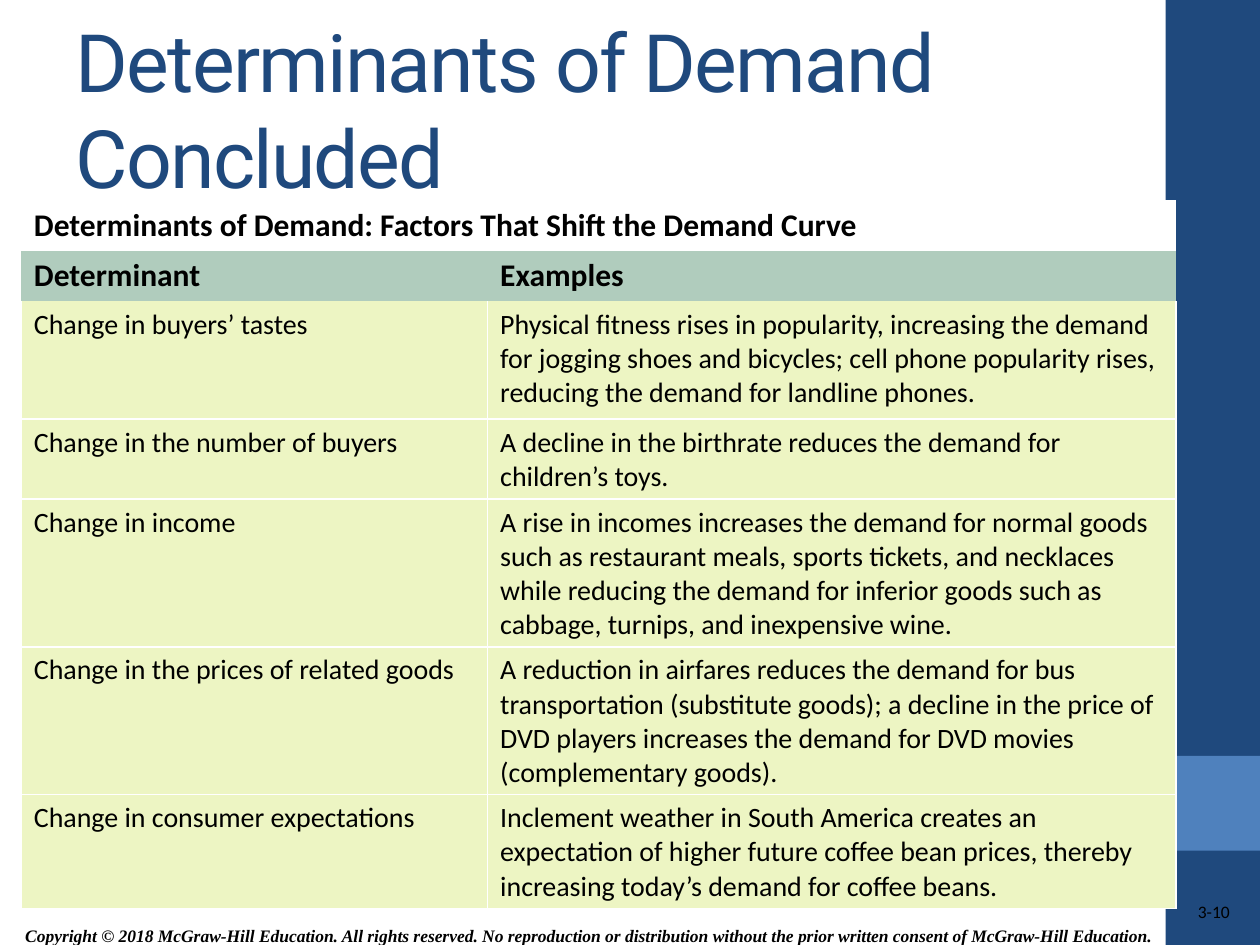
from lxml import etree
from pptx import Presentation
from pptx.dml.color import RGBColor
from pptx.enum.shapes import MSO_SHAPE
from pptx.enum.text import MSO_ANCHOR, MSO_AUTO_SIZE, PP_ALIGN
from pptx.oxml.ns import qn
from pptx.util import Cm, Pt

# Content
TITLE = "Determinants of Demand Concluded"
COPYRIGHT = ("Copyright © 2018 McGraw-Hill Education. All rights reserved. "
             "No reproduction or distribution without the prior written "
             "consent of McGraw-Hill Education.")
PAGE = "3-10"
CAPTION = "Determinants of Demand: Factors That Shift the Demand Curve"
HEADINGS = ("Determinant", "Examples")
# (determinant, example, row height in cm)
DETERMINANTS = [
    ("Change in buyers’ tastes",
     "Physical fitness rises in popularity, increasing the demand for jogging "
     "shoes and bicycles; cell phone popularity rises, reducing the demand "
     "for landline phones.", 2.38),
    ("Change in the number of buyers",
     "A decline in the birthrate reduces the demand for children’s toys.", 1.61),
    ("Change in income",
     "A rise in incomes increases the demand for normal goods such as "
     "restaurant meals, sports tickets, and necklaces while reducing the "
     "demand for inferior goods such as cabbage, turnips, and inexpensive "
     "wine.", 2.98),
    ("Change in the prices of related goods",
     "A reduction in airfares reduces the demand for bus transportation "
     "(substitute goods); a decline in the price of DVD players increases the "
     "demand for DVD movies (complementary goods).", 2.98),
    ("Change in consumer expectations",
     "Inclement weather in South America creates an expectation of higher "
     "future coffee bean prices, thereby increasing today’s demand for coffee "
     "beans.", 2.3),
]

# Look
NAVY, BLUE, BLACK, WHITE = "1F497D", "4F81BD", "000000", "FFFFFF"
SAGE, LIME = "B0CCBD", "EDF5C3"
COLUMN_WIDTHS = (9.4, 13.88)
HEAD_HEIGHT = 1.02


def paint(fill, colour):
    fill.solid()
    fill.fore_color.rgb = RGBColor.from_string(colour)


def write(frame, text, font, size, colour=BLACK, bold=False, italic=False,
          align=PP_ALIGN.LEFT):
    paragraph = frame.paragraphs[0]
    paragraph.alignment = align
    run = paragraph.add_run()
    run.text = text
    run.font.name, run.font.size = font, Pt(size)
    run.font.bold, run.font.italic = bold, italic
    run.font.color.rgb = RGBColor.from_string(colour)
    return run


def set_borders(cell, lined_sides):
    properties = cell._tc.get_or_add_tcPr()
    for side in "LRTB":
        line = etree.SubElement(properties, qn(f"a:ln{side}"), w=str(Pt(1)))
        if side in lined_sides:
            solid = etree.SubElement(line, qn("a:solidFill"))
            etree.SubElement(solid, qn("a:srgbClr"), val=WHITE)
        else:
            etree.SubElement(line, qn("a:noFill"))


def fill_cell(cell, text, size, colour, bold, lined_sides):
    set_borders(cell, lined_sides)
    paint(cell.fill, colour)
    write(cell.text_frame, text, "Calibri", size, bold=bold)


prs = Presentation()
prs.slide_width, prs.slide_height = Cm(25.4), Cm(19.05)
slide = prs.slides.add_slide(prs.slide_layouts[5])
shapes = slide.shapes

# Side bar and its accent square
for top, height, colour in ((0, 19.05, NAVY), (15.24, 1.91, BLUE)):
    bar = shapes.add_shape(MSO_SHAPE.RECTANGLE, Cm(23.5), Cm(top),
                           Cm(1.9), Cm(height))
    bar.shadow.inherit = False
    paint(bar.fill, colour)
    bar.line.fill.background()

# Copyright line
copyright_box = shapes.add_textbox(Cm(0.15), Cm(18.5), Cm(23.42), Cm(0.7))
copyright_box.text_frame.word_wrap = True
copyright_box.text_frame.vertical_anchor = MSO_ANCHOR.MIDDLE
write(copyright_box.text_frame, COPYRIGHT, "Times New Roman", 10,
      bold=True, italic=True, align=PP_ALIGN.CENTER)

# Page number
page_frame = shapes.add_textbox(Cm(19.84), Cm(18.16), Cm(4.95), Cm(0.5)).text_frame
page_frame.word_wrap = True
page_frame.margin_left = page_frame.margin_right = 0
page_frame.margin_top = page_frame.margin_bottom = 0
write(page_frame, PAGE, "Calibri", 10, align=PP_ALIGN.RIGHT)
page_frame.paragraphs[0].line_spacing = 1.02

# Title
title = shapes.title
title.left, title.top, title.width, title.height = Cm(1.27), Cm(0.76), Cm(21.16), Cm(2.84)
title.text_frame.word_wrap = True
title.text_frame.auto_size = MSO_AUTO_SIZE.NONE
title.text_frame.vertical_anchor = MSO_ANCHOR.MIDDLE
title_run = write(title.text_frame, TITLE, "Roboto", 46, NAVY)
title_run._r.get_or_add_rPr().set("spc", "-100")

# Table
heights = [HEAD_HEIGHT] * 2 + [height for _, _, height in DETERMINANTS]
table = shapes.add_table(len(heights), 2, Cm(0.43), Cm(4.03),
                         Cm(sum(COLUMN_WIDTHS)), Cm(sum(heights))).table
table.first_row = table.horz_banding = False
for column, width in zip(table.columns, COLUMN_WIDTHS):
    column.width = Cm(width)
for row, height in zip(table.rows, heights):
    row.height = Cm(height)

table.cell(0, 0).merge(table.cell(0, 1))
fill_cell(table.cell(0, 0), CAPTION, 18, WHITE, True, "")
set_borders(table.cell(0, 1), "")
for c, heading in enumerate(HEADINGS):
    fill_cell(table.cell(1, c), heading, 18, SAGE, True, "")
for r, (determinant, example, _) in enumerate(DETERMINANTS, start=2):
    for c, text in enumerate((determinant, example)):
        fill_cell(table.cell(r, c), text, 16, LIME, False,
                  "LRB" if r == 2 else "LRTB")

prs.save("out.pptx")
